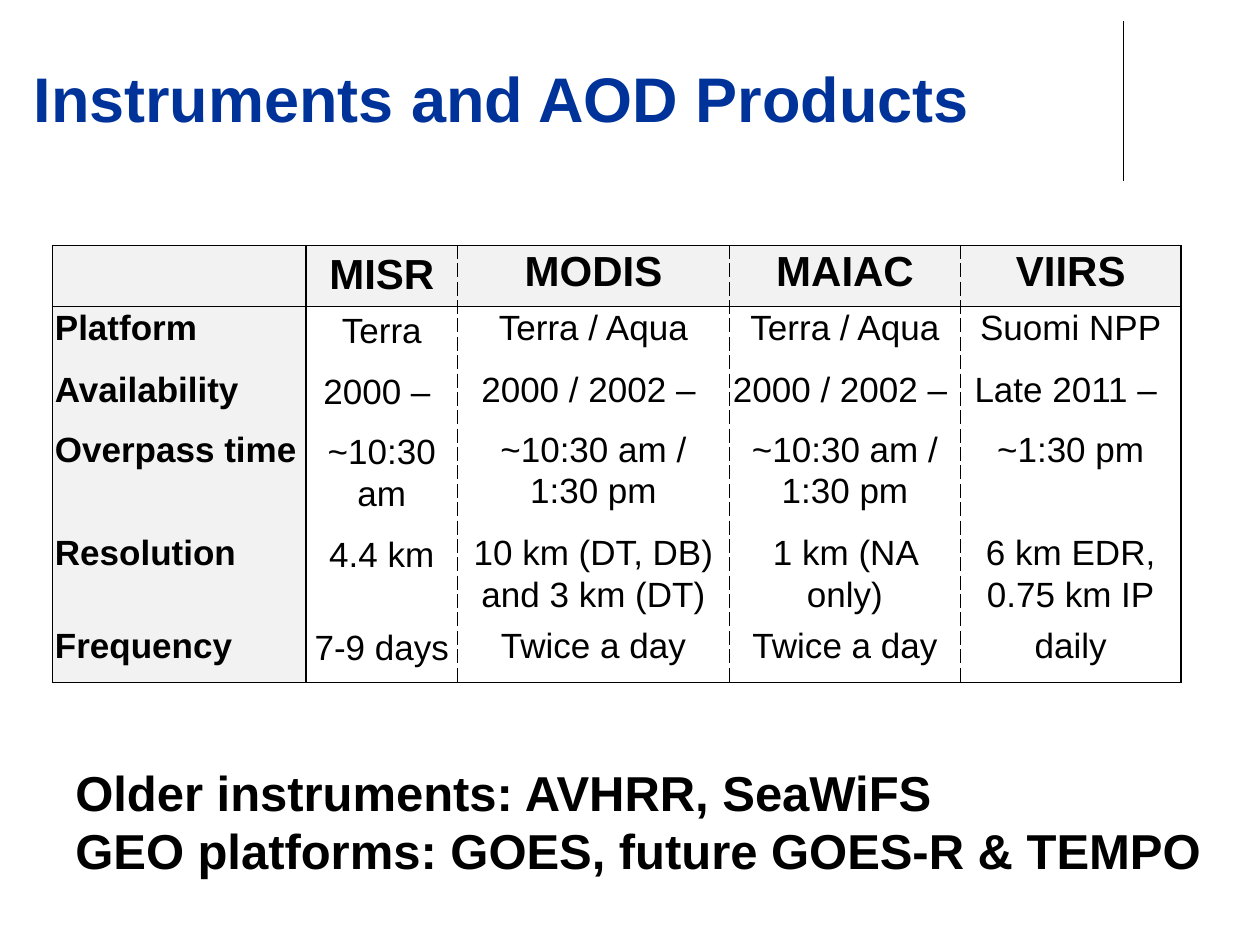
import pptx
import pptx.dml.color
import pptx.enum.shapes
import pptx.enum.text
import pptx.oxml
import pptx.oxml.ns
import pptx.util

Pt = pptx.util.Pt
Align = pptx.enum.text.PP_ALIGN
Anchor = pptx.enum.text.MSO_ANCHOR
Fit = pptx.enum.text.MSO_AUTO_SIZE

BLACK, BLUE, GREY = "000000", "003399", "F2F2F2"
ROWS = [
    ["", "MISR", "MODIS", "MAIAC", "VIIRS"],
    ["Platform", "Terra", "Terra / Aqua", "Terra / Aqua", "Suomi NPP"],
    ["Availability", "2000 – ", "2000 / 2002 – ", "2000 / 2002 – ", "Late 2011 – "],
    ["Overpass time", "~10:30 am", "~10:30 am / 1:30 pm", "~10:30 am / 1:30 pm", "~1:30 pm"],
    ["Resolution", "4.4 km", "10 km (DT, DB) and 3 km (DT)", "1 km (NA only)",
     "6 km EDR, 0.75 km IP"],
    ["Frequency", "7-9 days", "Twice a day", "Twice a day", "daily"],
]
WIDTHS = [145, 86.4, 155.5, 132, 126]
HEIGHTS = [34.8, 35, 34.2, 59, 53.2, 33.6]
PADS = [(1.4, 0), (2.9, 1.4), (2.9, 0), (1.4, 0), (2.9, 0)]


def color(code):
    return pptx.dml.color.RGBColor.from_string(code)


def style(para, size, code=BLACK, bold=True):
    for run in para.runs:
        font = run.font
        font.name, font.size, font.bold = "Arial", Pt(size), bold
        font.color.rgb = color(code)


def edge(cell, side, dash):
    """Draw one side of a cell; a dash of None hides it."""
    look = "<a:noFill/>"
    if dash:
        look = (f'<a:solidFill><a:srgbClr val="{BLACK}"/></a:solidFill>'
                f'<a:prstDash val="{dash}"/>')
    space = pptx.oxml.ns.nsdecls("a")
    line = f'<a:ln{side} {space} w="12700">{look}</a:ln{side}>'
    cell._tc.get_or_add_tcPr().append(pptx.oxml.parse_xml(line))


def frame(cell, row, col):
    """Solid outline, header rule and label rule; dashes between instruments."""
    last_row, last_col = len(ROWS) - 1, len(WIDTHS) - 1
    edge(cell, "L", "solid" if col < 2 else "sysDash")
    edge(cell, "R", "solid" if col in (0, last_col) else "sysDash")
    edge(cell, "T", "solid" if row < 2 else None)
    edge(cell, "B", "solid" if row in (0, last_row) else None)


def fill_cell(cell, text, row, col):
    frame(cell, row, col)
    head = row == 0 or col == 0
    if head:
        cell.fill.solid()
        cell.fill.fore_color.rgb = color(GREY)
    else:
        cell.fill.background()
    side, end = PADS[col]
    cell.margin_left = cell.margin_right = Pt(side)
    cell.margin_top = cell.margin_bottom = Pt(end)
    cell.vertical_anchor = Anchor.TOP
    para = cell.text_frame.paragraphs[0]
    para.text = text
    para.line_spacing = 1.07
    para.alignment = Align.LEFT if col == 0 else Align.CENTER
    style(para, 24 if row == 0 else 20, bold=head)


def add_grid(slide, left, top):
    shape = slide.shapes.add_table(len(ROWS), len(WIDTHS), Pt(left), Pt(top),
                                   Pt(sum(WIDTHS)), Pt(sum(HEIGHTS)))
    table = shape.table
    table.first_row = table.horz_banding = False
    for column, width in zip(table.columns, WIDTHS):
        column.width = Pt(width)
    for row, (height, texts) in enumerate(zip(HEIGHTS, ROWS)):
        table.rows[row].height = Pt(height)
        for col, text in enumerate(texts):
            fill_cell(table.cell(row, col), text, row, col)


def add_title(slide, left, top, width, height):
    title = slide.shapes.title
    title.left, title.top = Pt(left), Pt(top)
    title.width, title.height = Pt(width), Pt(height)
    text = title.text_frame
    text.text = "Instruments and AOD Products"
    text.auto_size = Fit.NONE
    text.vertical_anchor = Anchor.BOTTOM
    text.paragraphs[0].alignment = Align.LEFT
    style(text.paragraphs[0], 36, BLUE)


def add_rule(slide, x, top, height):
    rule = slide.shapes.add_connector(pptx.enum.shapes.MSO_CONNECTOR.STRAIGHT,
                                      Pt(x), Pt(top), Pt(x), Pt(top + height))
    rule.line.color.rgb = color(BLACK)
    rule.line.width = Pt(0.75)
    rule._element.spPr.append(pptx.oxml.parse_xml(
        f'<a:effectLst {pptx.oxml.ns.nsdecls("a")}/>'))


def add_notes(slide, left, top, width, height):
    box = slide.shapes.add_textbox(Pt(left), Pt(top), Pt(width), Pt(height))
    text = box.text_frame
    text.text = ("Older instruments: AVHRR, SeaWiFS\n"
                 "GEO platforms: GOES, future GOES-R & TEMPO")
    text.word_wrap = False
    text.auto_size = Fit.SHAPE_TO_FIT_TEXT
    for para in text.paragraphs:
        style(para, 28)


def main():
    deck = pptx.Presentation()
    deck.slide_width, deck.slide_height = Pt(720), Pt(540)
    slide = deck.slides.add_slide(deck.slide_layouts[5])
    add_rule(slide, 642, 12, 91.5)
    add_grid(slide, 30, 140.4)
    add_title(slide, 12, 18, 576, 62.6)
    add_notes(slide, 36, 432, 664.5, 75)
    deck.save("out.pptx")


if __name__ == "__main__":
    main()
